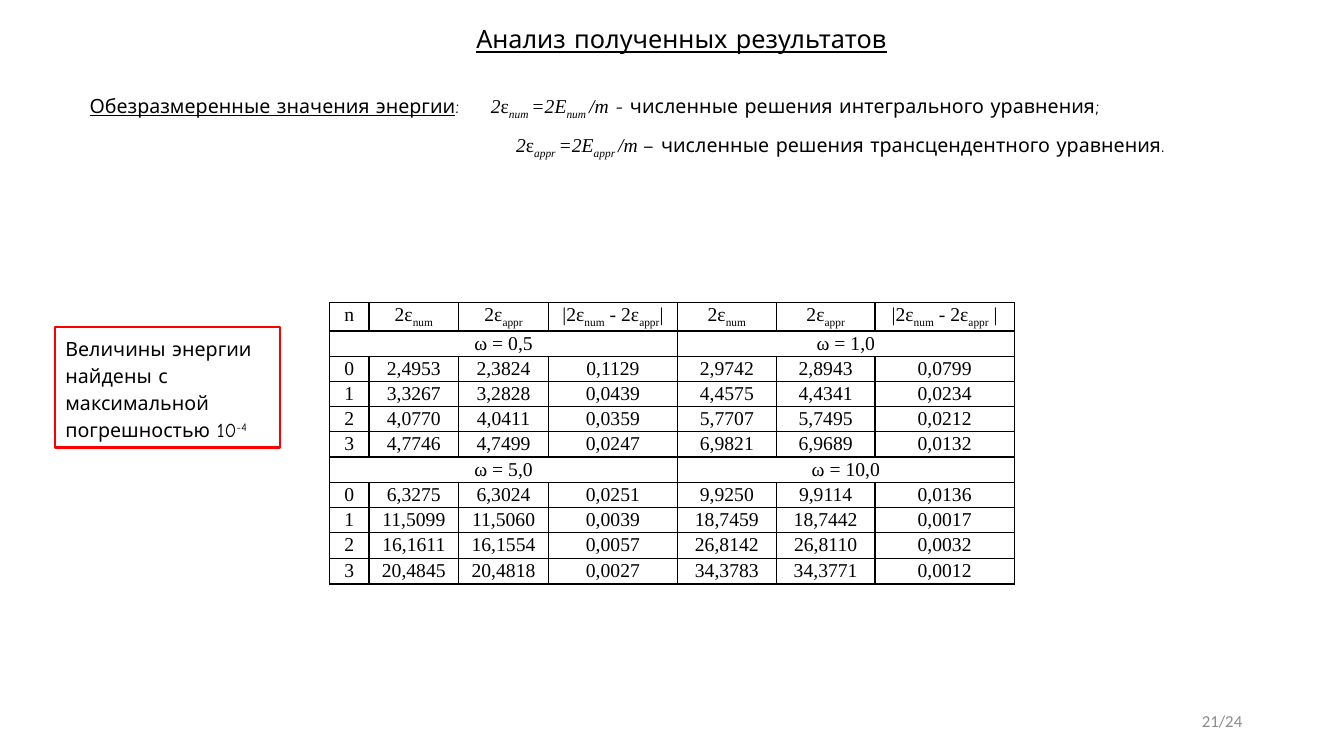
from lxml import etree
from pptx import Presentation
from pptx.dml.color import RGBColor
from pptx.enum.shapes import MSO_SHAPE
from pptx.enum.text import MSO_ANCHOR, PP_ALIGN
from pptx.oxml.ns import qn
from pptx.util import Inches, Pt

RECTANGLE = MSO_SHAPE.RECTANGLE
MIDDLE = MSO_ANCHOR.MIDDLE
LEFT, CENTER, RIGHT = PP_ALIGN.LEFT, PP_ALIGN.CENTER, PP_ALIGN.RIGHT
COLORS = {"black": "000000", "white": "FFFFFF", "red": "FF0000", "gray": "8C8C8C"}
COMIC, TIMES = "Comic Neue", "Times New Roman"


def add_run(paragraph, text, font=COMIC, size=14, italic=False, baseline=0,
            underline=False, color="black"):
    run = paragraph.add_run()
    run.text = text
    run.font.name = font
    run.font.size = Pt(size)
    run.font.italic = italic
    run.font.underline = underline
    run.font.color.rgb = RGBColor.from_string(COLORS[color])
    if baseline:
        run._r.get_or_add_rPr().set("baseline", str(baseline * 1000))


def add_box(slide, left, top, width, height, line_color):
    box = slide.shapes.add_shape(
        RECTANGLE, Inches(left), Inches(top), Inches(width), Inches(height))
    box.shadow.inherit = False
    box.fill.background()
    box.line.color.rgb = RGBColor.from_string(COLORS[line_color])
    box.line.width = Pt(1.5)
    box.text_frame.word_wrap = True
    box.text_frame.vertical_anchor = MIDDLE
    return box.text_frame


presentation = Presentation()
presentation.slide_width = Inches(13.33)
presentation.slide_height = Inches(7.5)
slide = presentation.slides.add_slide(presentation.slide_layouts[5])

# Page number
page_box = slide.shapes.add_textbox(Inches(9.42), Inches(6.95), Inches(3), Inches(0.4))
page_box.text_frame.word_wrap = True
page_box.text_frame.vertical_anchor = MIDDLE
page_paragraph = page_box.text_frame.paragraphs[0]
page_paragraph.alignment = RIGHT
add_run(page_paragraph, "21/24", "Calibri", 12, color="gray")

# Title
title = slide.shapes.title
title.left, title.top = Inches(1.01), Inches(0.3)
title.width, title.height = Inches(11.5), Inches(0.51)
title.text_frame.vertical_anchor = MIDDLE
title.text_frame.margin_top = 0
title.text_frame.margin_bottom = Inches(0.3)
title_paragraph = title.text_frame.paragraphs[0]
title_paragraph.alignment = CENTER
title_paragraph.line_spacing = 0.9
add_run(title_paragraph, "Анализ полученных результатов", size=18, underline=True)

# Energy definitions, each formula starting at its own tab stop
definitions = [
    ("num ", "/m", " -", " численные решения интегрального уравнения;", 3.98),
    ("appr ", "/m ", "", "– численные решения трансцендентного уравнения.", 4.23),
]
energy_frame = add_box(slide, 0.79, 0.57, 11.74, 1.33, "white")
for index, (subscript, mass, dash, meaning, tab) in enumerate(definitions):
    paragraph = energy_frame.paragraphs[0] if index == 0 else energy_frame.add_paragraph()
    paragraph.alignment = LEFT
    paragraph.line_spacing = 1.15
    paragraph.space_after = Pt(6)
    tab_list = etree.SubElement(paragraph._p.get_or_add_pPr(), qn("a:tabLst"))
    etree.SubElement(tab_list, qn("a:tab"), pos=str(Inches(tab)), algn="l")
    if index == 0:
        add_run(paragraph, "Обезразмеренные значения энергии", underline=True)
        add_run(paragraph, ":")
    add_run(paragraph, "\t")
    add_run(paragraph, "2", TIMES, italic=True)
    add_run(paragraph, "ε", TIMES)
    add_run(paragraph, subscript, TIMES, italic=True, baseline=-25)
    add_run(paragraph, "=2E", TIMES, italic=True)
    add_run(paragraph, subscript, TIMES, italic=True, baseline=-25)
    add_run(paragraph, mass, TIMES, italic=True)
    if dash:
        add_run(paragraph, dash, italic=True)
    add_run(paragraph, meaning)

# Results table; text between underscores is subscript
rows = [
    ["n", "2ε_num", "2ε_appr", "|2ε_num_ - 2ε_appr_|",
     "2ε_num", "2ε_appr", "|2ε_num_ - 2ε_appr_ |"],
    ["ω = 0,5", "", "", "", "ω = 1,0", "", ""],
    ["0", "2,4953", "2,3824", "0,1129", "2,9742", "2,8943", "0,0799"],
    ["1", "3,3267", "3,2828", "0,0439", "4,4575", "4,4341", "0,0234"],
    ["2", "4,0770", "4,0411", "0,0359", "5,7707", "5,7495", "0,0212"],
    ["3", "4,7746", "4,7499", "0,0247", "6,9821", "6,9689", "0,0132"],
    ["ω = 5,0", "", "", "", "ω = 10,0", "", ""],
    ["0", "6,3275", "6,3024", "0,0251", "9,9250", "9,9114", "0,0136"],
    ["1", "11,5099", "11,5060", "0,0039", "18,7459", "18,7442", "0,0017"],
    ["2", "16,1611", "16,1554", "0,0057", "26,8142", "26,8110", "0,0032"],
    ["3", "20,4845", "20,4818", "0,0027", "34,3783", "34,3771", "0,0012"],
]
column_widths = [0.39, 0.89, 0.89, 1.28, 0.98, 0.98, 1.38]
row_heights = [0.25] + [0.23] * 8 + [0.26, 0.23]
table = slide.shapes.add_table(
    len(rows), len(column_widths), Inches(3.27), Inches(3),
    Inches(sum(column_widths)), Inches(sum(row_heights))).table
table.first_row = False
table.horz_banding = False
for column, width in zip(table.columns, column_widths):
    column.width = Inches(width)
for row, height in zip(table.rows, row_heights):
    row.height = Inches(height)

for row_index, values in enumerate(rows):
    for column_index, value in enumerate(values):
        cell = table.cell(row_index, column_index)
        cell.margin_left = cell.margin_right = Inches(0.07)
        cell.margin_top = cell.margin_bottom = 0
        paragraph = cell.text_frame.paragraphs[0]
        paragraph.alignment = CENTER
        paragraph.line_spacing = 1.07
        if value:
            for part_index, part in enumerate(value.split("_")):
                add_run(paragraph, part, TIMES, baseline=-25 * (part_index % 2))
        # Heavier rules below the header and between the two halves
        borders = {
            "a:lnL": 1.5 if column_index == 4 else 1,
            "a:lnR": 1.5 if column_index == 3 else 1,
            "a:lnT": 2.25 if row_index == 1 else 1,
            "a:lnB": 2.25 if row_index == 0 else 1,
        }
        properties = cell._tc.get_or_add_tcPr()
        for tag, border_width in borders.items():
            border = etree.SubElement(properties, qn(tag), w=str(Pt(border_width)))
            fill = etree.SubElement(border, qn("a:solidFill"))
            etree.SubElement(fill, qn("a:srgbClr"), val=COLORS["black"])
        cell.fill.background()

for row_index in (1, 6):
    table.cell(row_index, 0).merge(table.cell(row_index, 3))
    table.cell(row_index, 4).merge(table.cell(row_index, 6))

# Accuracy note
note_paragraph = add_box(slide, 0.55, 3.24, 2.23, 1.2, "red").paragraphs[0]
note_paragraph.alignment = LEFT
note_paragraph.line_spacing = 1.15
note_paragraph.space_after = Pt(6)
add_run(note_paragraph, "Величины энергии найдены с максимальной погрешностью 10")
add_run(note_paragraph, "-4", baseline=30)

presentation.save("out.pptx")
